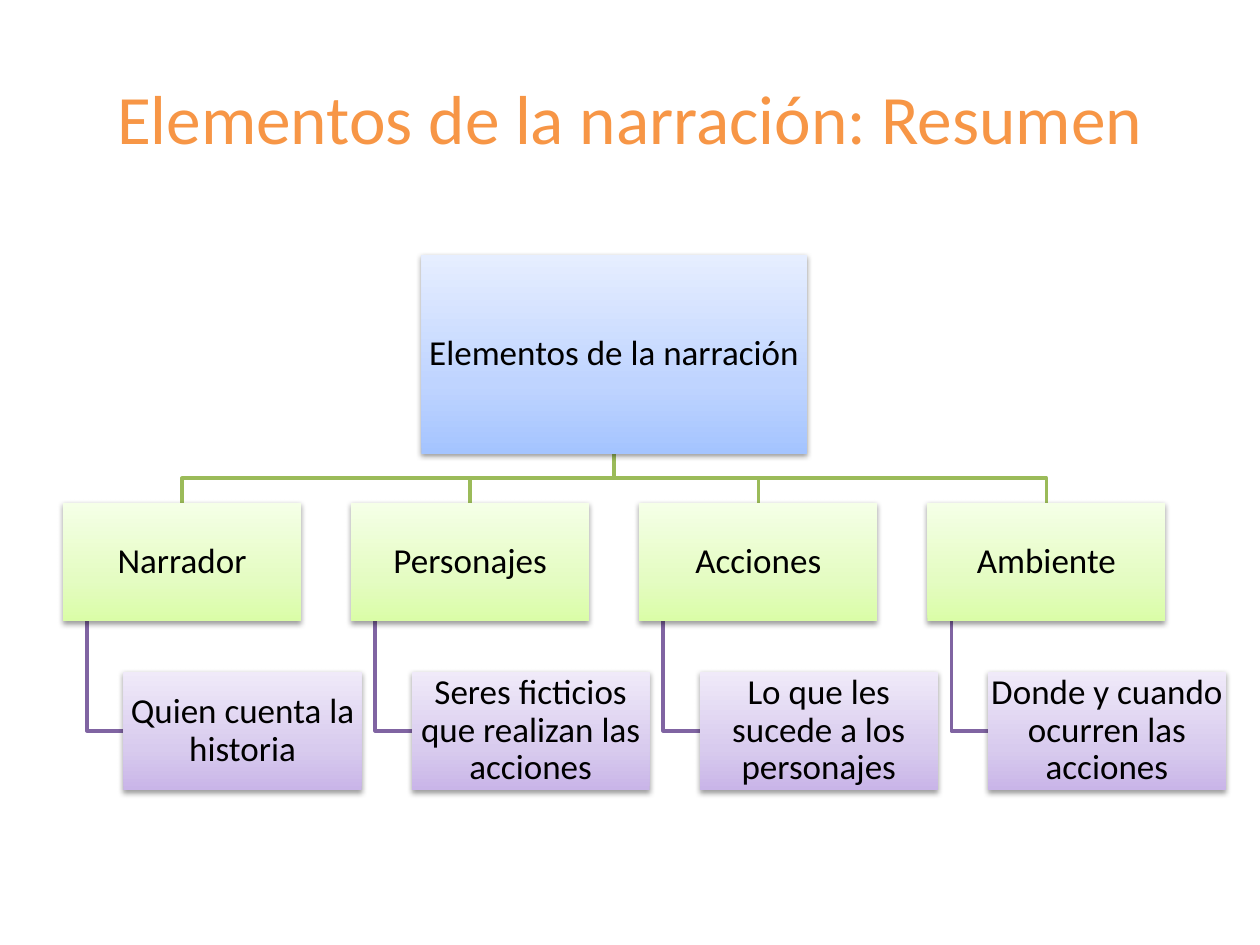
from dataclasses import dataclass
from typing import NamedTuple

from lxml.etree import SubElement
from pptx import Presentation
from pptx.dml.color import RGBColor
from pptx.enum.shapes import MSO_SHAPE
from pptx.enum.text import MSO_ANCHOR, PP_ALIGN
from pptx.oxml.ns import qn
from pptx.util import Inches, Pt


@dataclass(frozen=True)
class Theme:
    font: str = "Calibri"
    title_size: float = 39.6
    box_size: float = 20
    line_width: float = 2
    title: str = "F79646"
    text: str = "000000"
    branch_line: str = "9BBB59"
    detail_line: str = "8064A2"
    # Gradients run from the bottom edge to the top edge
    root_fill: tuple = ("A4C4FF", "BFD4FF", "E6EEFF")
    branch_fill: tuple = ("DAFDA7", "E4FCC2", "F5FFE7")
    detail_fill: tuple = ("C9B5E8", "D8CBEE", "F0EAF9")


class Box(NamedTuple):
    left: float
    top: float
    width: float
    height: float

    @property
    def center(self) -> float:
        return self.left + self.width / 2

    @property
    def middle(self) -> float:
        return self.top + self.height / 2

    @property
    def bottom(self) -> float:
        return self.top + self.height


class Element(NamedTuple):
    name: str
    detail: str


THEME = Theme()
ELEMENTS = [
    Element("Narrador", "Quien cuenta la historia"),
    Element("Personajes", "Seres ficticios que realizan las acciones"),
    Element("Acciones", "Lo que les sucede a los personajes"),
    Element("Ambiente", "Donde y cuando ocurren las acciones"),
]

# Layout in inches
TITLE = Box(0.5, 0.3, 9, 1.25)
FIRST_LEFT, LAST_LEFT = 0.5, 7.36
PITCH = (LAST_LEFT - FIRST_LEFT) / (len(ELEMENTS) - 1)
BOX_WIDTH, BOX_HEIGHT = 1.89, 0.94
BRANCH_TOP, DETAIL_TOP = 3.99, 5.33
DETAIL_INDENT, DROP_INDENT = 0.48, 0.19
ROOT_WIDTH = 3.06
ROOT_LEFT = (FIRST_LEFT + LAST_LEFT + BOX_WIDTH - ROOT_WIDTH) / 2
ROOT = Box(ROOT_LEFT, 2.02, ROOT_WIDTH, 1.58)


def write_text(shape, text: str, size: float, color: str) -> None:
    frame = shape.text_frame
    frame.word_wrap = True
    frame.vertical_anchor = MSO_ANCHOR.MIDDLE
    paragraph = frame.paragraphs[0]
    paragraph.alignment = PP_ALIGN.CENTER
    run = paragraph.add_run()
    run.text = text
    run.font.name = THEME.font
    run.font.size = Pt(size)
    run.font.color.rgb = RGBColor.from_string(color)


def fill_gradient(shape, colors: tuple) -> None:
    shape.fill.gradient()
    shape.fill.gradient_angle = 90
    stops = shape._element.spPr.find(qn("a:gradFill")).find(qn("a:gsLst"))
    stops.clear()
    for position, color in zip((0, 35000, 100000), colors):
        stop = SubElement(stops, qn("a:gs"), pos=str(position))
        SubElement(stop, qn("a:srgbClr"), val=color)


def add_soft_shadow(shape) -> None:
    shape.shadow.inherit = False
    effects = shape._element.spPr.find(qn("a:effectLst"))
    shadow = SubElement(effects, qn("a:outerShdw"), blurRad="40000",
                        dist="20000", dir="5400000", rotWithShape="0")
    color = SubElement(shadow, qn("a:srgbClr"), val="000000")
    SubElement(color, qn("a:alpha"), val="38000")


def add_box(slide, box: Box, text: str, colors: tuple) -> None:
    shape = slide.shapes.add_shape(MSO_SHAPE.RECTANGLE, *map(Inches, box))
    fill_gradient(shape, colors)
    shape.line.fill.background()
    add_soft_shadow(shape)
    frame = shape.text_frame
    frame.margin_left = frame.margin_right = Inches(0.01)
    frame.margin_top = frame.margin_bottom = Inches(0.01)
    write_text(shape, text, THEME.box_size, THEME.text)
    frame.paragraphs[0].line_spacing = 0.9


def add_elbow(slide, points: list[tuple[float, float]], color: str) -> None:
    start, *rest = [(Inches(x), Inches(y)) for x, y in points]
    builder = slide.shapes.build_freeform(*start, scale=1.0)
    builder.add_line_segments(rest, close=False)
    shape = builder.convert_to_shape()
    shape.fill.background()
    shape.line.color.rgb = RGBColor.from_string(color)
    shape.line.width = Pt(THEME.line_width)
    shape.shadow.inherit = False


def main() -> None:
    presentation = Presentation()
    presentation.slide_width, presentation.slide_height = Inches(10), Inches(7.5)
    slide = presentation.slides.add_slide(presentation.slide_layouts[6])

    # Title
    title = slide.shapes.add_textbox(*map(Inches, TITLE))
    write_text(title, "Elementos de la narración: Resumen",
               THEME.title_size, THEME.title)

    # Column positions
    lefts = [FIRST_LEFT + index * PITCH for index in range(len(ELEMENTS))]
    branches = [Box(left, BRANCH_TOP, BOX_WIDTH, BOX_HEIGHT) for left in lefts]
    details = [Box(left + DETAIL_INDENT, DETAIL_TOP, BOX_WIDTH, BOX_HEIGHT)
               for left in lefts]

    # Connecting lines, behind the boxes
    turn = (ROOT.bottom + BRANCH_TOP) / 2
    for branch, detail in zip(branches, details):
        drop = branch.left + DROP_INDENT
        add_elbow(slide, [(drop, branch.bottom), (drop, detail.middle),
                          (detail.left, detail.middle)], THEME.detail_line)
        add_elbow(slide, [(ROOT.center, ROOT.bottom), (ROOT.center, turn),
                          (branch.center, turn), (branch.center, branch.top)],
                  THEME.branch_line)

    # Boxes
    add_box(slide, ROOT, "Elementos de la narración", THEME.root_fill)
    for element, branch, detail in zip(ELEMENTS, branches, details):
        add_box(slide, branch, element.name, THEME.branch_fill)
        add_box(slide, detail, element.detail, THEME.detail_fill)

    presentation.save("out.pptx")


if __name__ == "__main__":
    main()
